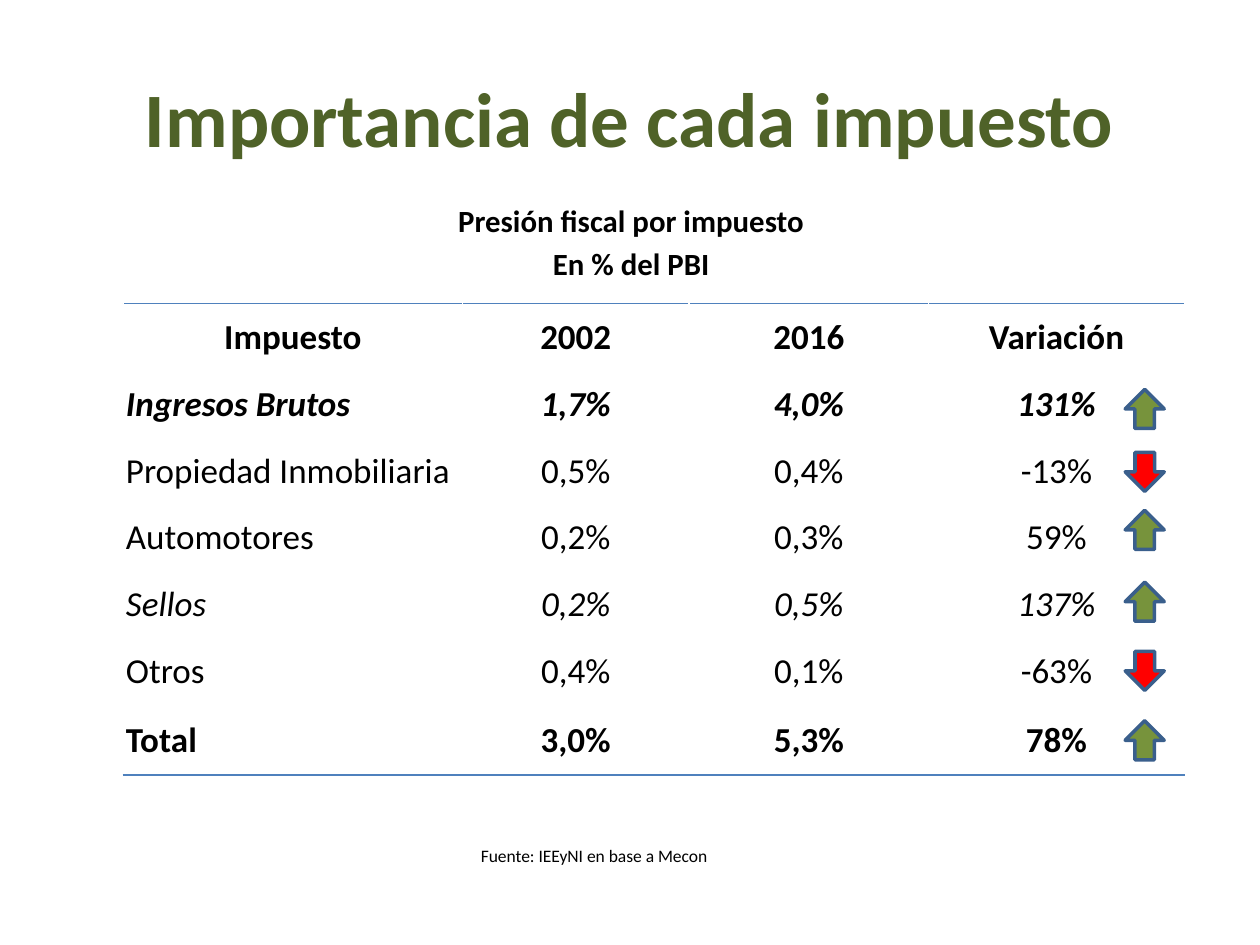
"""Build a slide with a table of tax pressure by tax and its change."""
from lxml import etree
from pptx import Presentation
from pptx.dml.color import RGBColor
from pptx.enum.shapes import MSO_SHAPE
from pptx.enum.text import MSO_ANCHOR, PP_ALIGN
from pptx.oxml.ns import qn
from pptx.util import Inches, Pt


def color(value):
    return RGBColor.from_string(value)


def format_paragraph(paragraph, size, bold=False, italic=False, fill="000000", align=PP_ALIGN.CENTER):
    paragraph.alignment = align
    for run in paragraph.runs:
        run.font.name = "Calibri"
        run.font.size = Pt(size)
        run.font.bold = bold
        run.font.italic = italic
        run.font.color.rgb = color(fill)


presentation = Presentation()
presentation.slide_width = Inches(10)
presentation.slide_height = Inches(7.5)
slide = presentation.slides.add_slide(presentation.slide_layouts[1])

title = slide.shapes.title
title.left, title.top, title.width, title.height = Inches(0.5), Inches(0.3), Inches(9), Inches(1.25)
title.text_frame.text = "Importancia de cada impuesto"
title.text_frame.vertical_anchor = MSO_ANCHOR.MIDDLE
format_paragraph(title.text_frame.paragraphs[0], 44, bold=True, fill="4F6228")

rows = [
    ("Impuesto", "2002", "2016", "Variación"),
    ("Ingresos Brutos", "1,7%", "4,0%", "131%"),
    ("Propiedad Inmobiliaria", "0,5%", "0,4%", "-13%"),
    ("Automotores", "0,2%", "0,3%", "59%"),
    ("Sellos", "0,2%", "0,5%", "137%"),
    ("Otros", "0,4%", "0,1%", "-63%"),
    ("Total", "3,0%", "5,3%", "78%"),
]
last_row = len(rows) - 1
bold_rows = (0, 1, last_row)
italic_rows = (1, 4)
border_tags = {0: "a:lnT", last_row: "a:lnB"}

table = slide.shapes.add_table(
    len(rows), 4, Inches(0.98), Inches(2.41), Inches(8.42), Inches(3.74)
).table
table.first_row = False
table.horz_banding = False
for column, width in zip(table.columns, (2.69, 1.8, 1.9, 2.03)):
    column.width = Inches(width)

for row_index, values in enumerate(rows):
    table.rows[row_index].height = Inches(0.56 if row_index == last_row else 0.53)
    for column_index, value in enumerate(values):
        cell = table.cell(row_index, column_index)
        cell.fill.background()
        cell.vertical_anchor = MSO_ANCHOR.MIDDLE
        cell.margin_left = cell.margin_right = Inches(0.02)
        cell.margin_top, cell.margin_bottom = Inches(0.01), Inches(0)
        cell.text_frame.text = value
        is_label = column_index == 0 and row_index > 0
        format_paragraph(
            cell.text_frame.paragraphs[0], 20,
            bold=row_index in bold_rows,
            italic=row_index in italic_rows,
            align=PP_ALIGN.LEFT if is_label else PP_ALIGN.CENTER,
        )
        if row_index in border_tags:
            border = etree.Element(qn(border_tags[row_index]), w=str(Pt(1)))
            border_fill = etree.SubElement(border, qn("a:solidFill"))
            etree.SubElement(border_fill, qn("a:srgbClr"), val="4F81BD")
            cell._tc.get_or_add_tcPr().insert(0, border)

subtitle = slide.placeholders[1]
subtitle.left, subtitle.top, subtitle.width, subtitle.height = Inches(2.8), Inches(1.55), Inches(4.42), Inches(0.7)
subtitle.text_frame.text = "Presión fiscal por impuesto\nEn % del PBI"
for paragraph in subtitle.text_frame.paragraphs:
    format_paragraph(paragraph, 17.6, bold=True)
    paragraph.space_before = Pt(3.5)
    properties = paragraph._p.get_or_add_pPr()
    properties.set("marL", "0")
    properties.set("indent", "0")
    etree.SubElement(properties, qn("a:buNone"))

source = slide.shapes.add_textbox(Inches(2.72), Inches(6.66), Inches(4.02), Inches(0.27))
source.text_frame.word_wrap = True
source.text_frame.text = "Fuente: IEEyNI en base a Mecon "
format_paragraph(source.text_frame.paragraphs[0], 10)

arrow_styles = {"up": (270, "77933C"), "down": (90, "FF0000")}
arrows = [(3.09, "up"), (3.59, "down"), (4.05, "up"), (4.62, "up"), (5.17, "down"), (5.72, "up")]
for top, direction in arrows:
    rotation, fill = arrow_styles[direction]
    arrow = slide.shapes.add_shape(
        MSO_SHAPE.RIGHT_ARROW, Inches(8.93), Inches(top), Inches(0.31), Inches(0.31)
    )
    arrow.rotation = rotation
    arrow.shadow.inherit = False
    arrow.fill.solid()
    arrow.fill.fore_color.rgb = color(fill)
    arrow.line.color.rgb = color("3A5F8C")
    arrow.line.width = Pt(2)

presentation.save("out.pptx")
